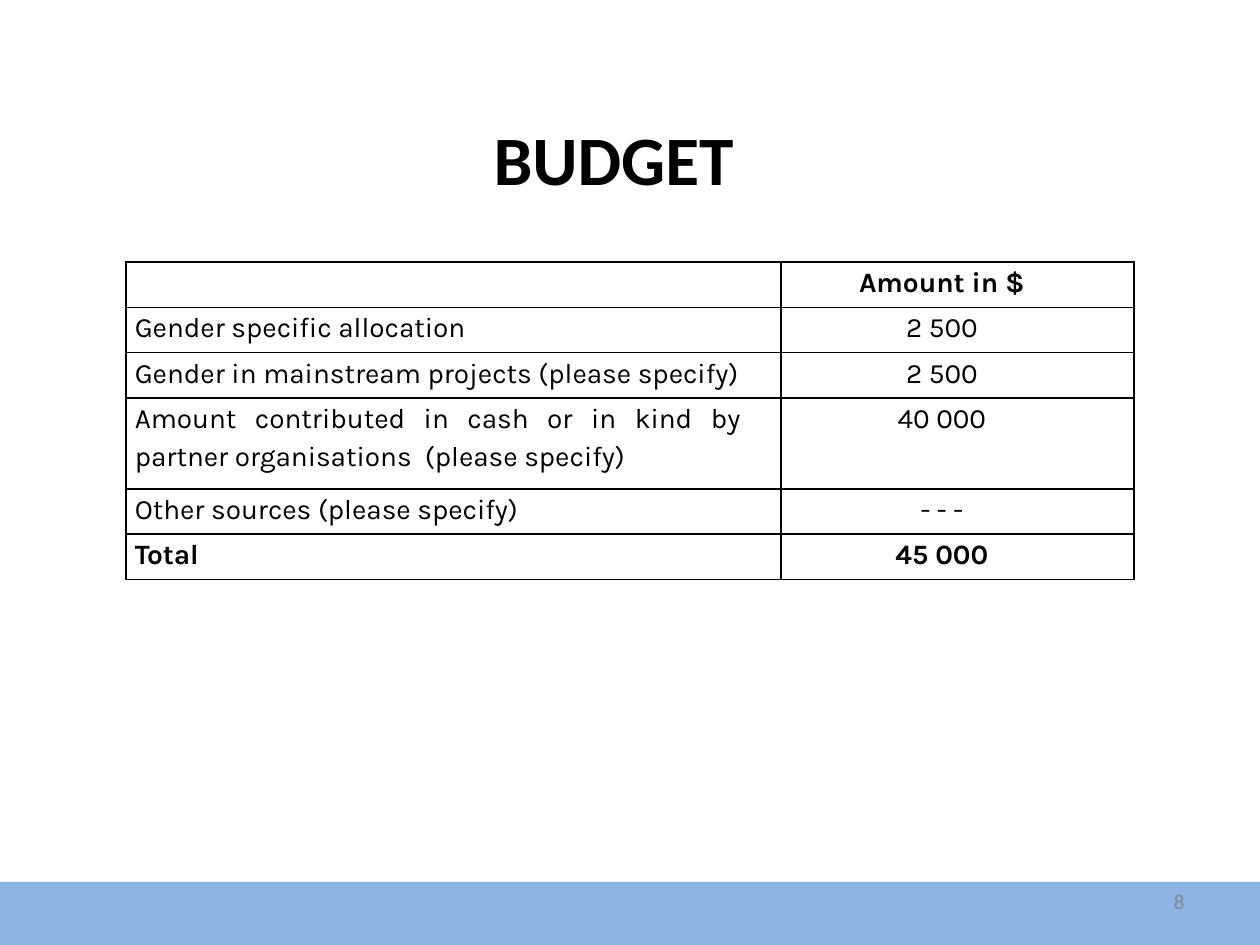
import pptx
import pptx.dml.color
import pptx.enum.shapes
import pptx.enum.text
import pptx.oxml
import pptx.oxml.ns
import pptx.util

ALIGN = pptx.enum.text.PP_ALIGN
Inches = pptx.util.Inches

TITLE = "BUDGET"
PAGE_NUMBER = "8"
HEADER = ("", "Amount in $")
BUDGET_LINES = [
    ("Gender specific allocation", "2 500"),
    ("Gender in mainstream projects (please specify)", "2 500"),
    ("Amount contributed in cash or in kind by partner organisations  (please specify)", "40 000"),
    ("Other sources (please specify)", "- - -"),
]
TOTAL = ("Total", "45 000")

COLORS = {"text": "000000", "bar": "8EB4E3", "number": "898989", "border": "000000"}
TITLE_FONT = {"name": "Calibri", "size": 39.6, "color": "text", "bold": True}
NUMBER_FONT = {"name": "Calibri", "size": 12, "color": "number", "bold": False}
BODY_FONT = {"name": "Karla", "size": 16, "color": "text", "bold": False}
EMPHASIS_FONT = {**BODY_FONT, "bold": True}

SLIDE_WIDTH, SLIDE_HEIGHT = 10, 7.5
BAR_TOP, BAR_HEIGHT = 7, 0.53
TITLE_BOX = (0.37, 0.92, 9, 0.67)
NUMBER_BOX = (7.17, 6.95, 2.33, 0.4)
TABLE_LEFT, TABLE_TOP = 1, 2.08
COLUMNS = [(5.2, ALIGN.JUSTIFY), (2.8, ALIGN.CENTER)]
ROW_HEIGHT = 0.36
ONE_LINE_LIMIT = 60
CELL_MARGIN_LEFT, CELL_MARGIN_RIGHT = 0.07, 0.32
BORDER_SIDES = ("lnL", "lnR", "lnT", "lnB")


def rgb(color_name):
    return pptx.dml.color.RGBColor.from_string(COLORS[color_name])


def write(paragraph, text, font, alignment):
    paragraph.text = text
    paragraph.alignment = alignment
    paragraph.font.name = font["name"]
    paragraph.font.size = pptx.util.Pt(font["size"])
    paragraph.font.bold = font["bold"]
    paragraph.font.color.rgb = rgb(font["color"])


def add_text_box(slide, box, text, font, alignment):
    frame = slide.shapes.add_textbox(*map(Inches, box)).text_frame
    frame.word_wrap = True
    frame.margin_top = frame.margin_bottom = 0
    frame.vertical_anchor = pptx.enum.text.MSO_ANCHOR.MIDDLE
    write(frame.paragraphs[0], text, font, alignment)


def add_bottom_bar(slide):
    box = (0, BAR_TOP, SLIDE_WIDTH, BAR_HEIGHT)
    bar = slide.shapes.add_shape(pptx.enum.shapes.MSO_SHAPE.RECTANGLE, *map(Inches, box))
    bar.shadow.inherit = False
    bar.fill.solid()
    bar.fill.fore_color.rgb = rgb("bar")
    bar.line.fill.background()


def add_borders(cell):
    properties = cell._tc.get_or_add_tcPr()
    for position, side in enumerate(BORDER_SIDES):
        border = pptx.oxml.parse_xml(
            f'<a:{side} {pptx.oxml.ns.nsdecls("a")} w="{pptx.util.Pt(1)}"><a:solidFill>'
            f'<a:srgbClr val="{COLORS["border"]}"/></a:solidFill></a:{side}>')
        properties.insert(position, border)


def fill_cell(cell, text, font, alignment):
    cell.margin_left = Inches(CELL_MARGIN_LEFT)
    cell.margin_right = Inches(CELL_MARGIN_RIGHT)
    cell.margin_top = cell.margin_bottom = 0
    cell.fill.background()
    add_borders(cell)
    paragraph = cell.text_frame.paragraphs[0]
    paragraph.line_spacing = 1.15
    write(paragraph, text, font, alignment)


def row_height(label):
    line_count = 2 if len(label) > ONE_LINE_LIMIT else 1
    return ROW_HEIGHT * line_count


def add_budget_table(slide):
    rows = [(HEADER, EMPHASIS_FONT)]
    rows += [(budget_line, BODY_FONT) for budget_line in BUDGET_LINES]
    rows += [(TOTAL, EMPHASIS_FONT)]

    width = sum(column_width for column_width, alignment in COLUMNS)
    height = sum(row_height(label) for (label, amount), font in rows)
    box = (TABLE_LEFT, TABLE_TOP, width, height)
    table = slide.shapes.add_table(len(rows), len(COLUMNS), *map(Inches, box)).table
    table.first_row = table.horz_banding = False

    for table_column, (column_width, alignment) in zip(table.columns, COLUMNS):
        table_column.width = Inches(column_width)
    for table_row, (texts, font) in zip(table.rows, rows):
        table_row.height = Inches(row_height(texts[0]))
        for cell, text, (column_width, alignment) in zip(table_row.cells, texts, COLUMNS):
            fill_cell(cell, text, font, alignment)


def main():
    presentation = pptx.Presentation()
    presentation.slide_width = Inches(SLIDE_WIDTH)
    presentation.slide_height = Inches(SLIDE_HEIGHT)
    slide = presentation.slides.add_slide(presentation.slide_layouts[6])

    add_text_box(slide, TITLE_BOX, TITLE, TITLE_FONT, ALIGN.CENTER)
    add_budget_table(slide)
    add_bottom_bar(slide)
    add_text_box(slide, NUMBER_BOX, PAGE_NUMBER, NUMBER_FONT, ALIGN.RIGHT)

    presentation.save("out.pptx")


if __name__ == "__main__":
    main()
